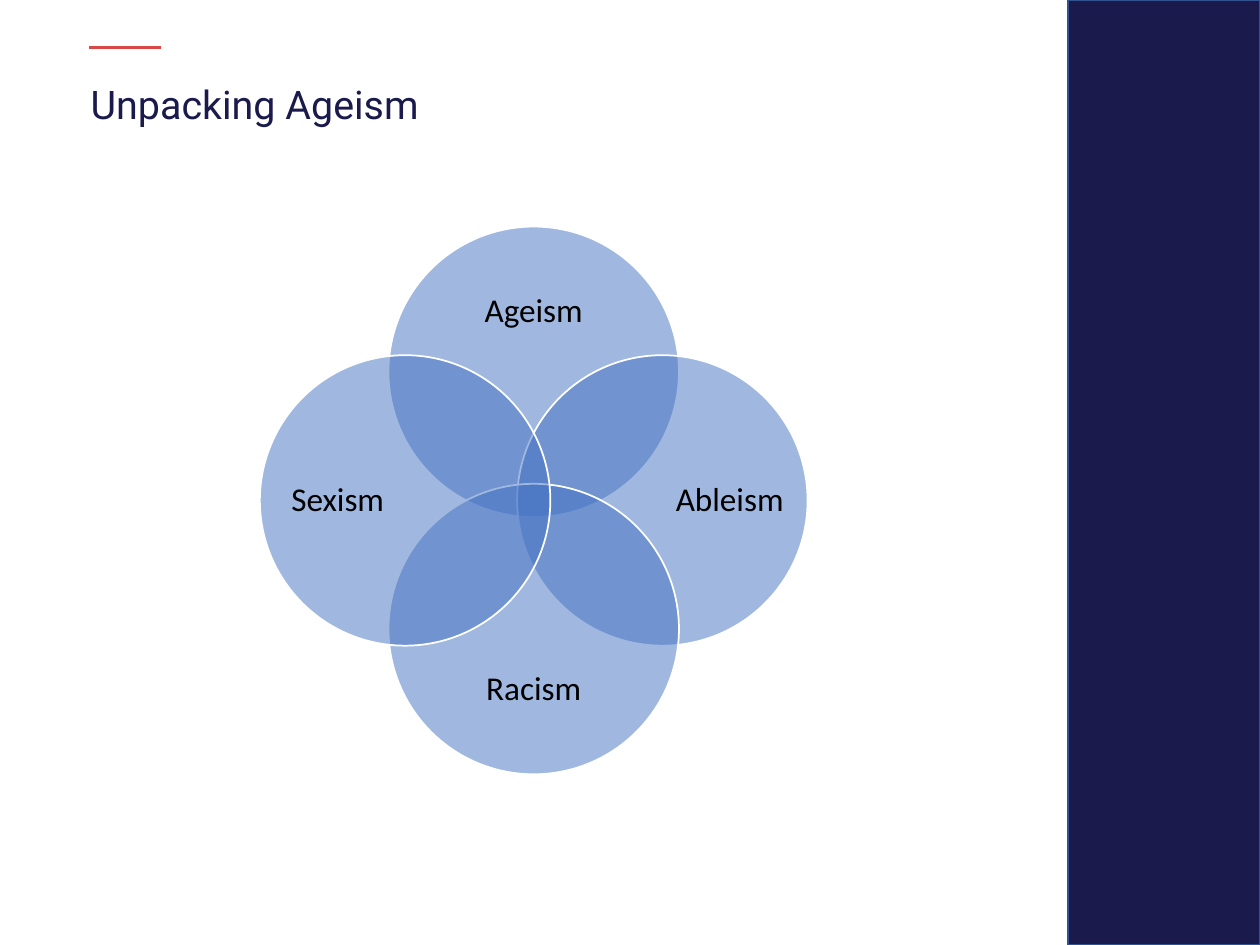
from dataclasses import dataclass

from lxml import etree
from pptx import Presentation
from pptx.dml.color import RGBColor
from pptx.enum import shapes, text
from pptx.oxml import ns
from pptx.util import Pt


@dataclass
class Theme:
    navy: str = "1A1A4C"
    edge: str = "32538F"
    red: str = "D94747"
    blue: str = "4372C3"
    white: str = "FFFFFF"
    black: str = "000000"
    head: float = 22.5
    label: float = 19


theme = Theme()


def write(frame, words, font, size, color, align, anchor, pad=(0, 0)):
    frame.word_wrap = True
    frame.auto_size = text.MSO_AUTO_SIZE.NONE
    frame.vertical_anchor = anchor
    frame.margin_left = frame.margin_right = Pt(pad[0])
    frame.margin_top = frame.margin_bottom = Pt(pad[1])
    para = frame.paragraphs[0]
    para.alignment = align
    para.line_spacing = 0.9
    run = para.add_run()
    run.text = words
    run.font.name = font
    run.font.size = Pt(size)
    run.font.color.rgb = RGBColor.from_string(color)


def draw(kind, left, top, wide, high, fill, line):
    shape = slide.shapes.add_shape(kind, Pt(left), Pt(top), Pt(wide), Pt(high))
    shape.shadow.inherit = False
    shape.fill.solid()
    shape.fill.fore_color.rgb = RGBColor.from_string(fill)
    shape.line.color.rgb = RGBColor.from_string(line)
    shape.line.width = Pt(1)
    return shape


deck = Presentation()
deck.slide_width, deck.slide_height = Pt(720), Pt(540)
slide = deck.slides.add_slide(deck.slide_layouts[5])

draw(shapes.MSO_SHAPE.RECTANGLE, 610.4, 0, 109.6, 540, theme.navy, theme.edge)

rule = slide.shapes.add_connector(
    shapes.MSO_CONNECTOR.STRAIGHT, Pt(51), Pt(27), Pt(92), Pt(27))
rule.line.color.rgb = RGBColor.from_string(theme.red)
rule.line.width = Pt(1.75)
etree.SubElement(rule._element.spPr, ns.qn("a:effectLst"))

title = slide.shapes.title
title.left, title.top = Pt(44.6), Pt(45.4)
title.width, title.height = Pt(521), Pt(44)
write(title.text_frame, "Unpacking Ageism", "Roboto", theme.head, theme.navy,
      text.PP_ALIGN.LEFT, text.MSO_ANCHOR.TOP, (7.2, 3.6))

mid_x, mid_y = 305, 286
size, step = 166, 73.5
petals = [("Ageism", 0, -1), ("Ableism", 1, 0), ("Racism", 0, 1), ("Sexism", -1, 0)]

for name, dx, dy in petals:
    disc = draw(shapes.MSO_SHAPE.OVAL, mid_x + dx * step - size / 2,
                mid_y + dy * step - size / 2, size, size, theme.blue, theme.white)
    tint = disc._element.spPr.find(ns.qn("a:solidFill"))[0]
    etree.SubElement(tint, ns.qn("a:alpha"), val="50000")
    wide, high = (64, 128) if dx else (128, 52.5)
    box = slide.shapes.add_textbox(
        Pt(mid_x + dx * 112 - wide / 2), Pt(mid_y + dy * 108 - high / 2),
        Pt(wide), Pt(high))
    write(box.text_frame, name, "Calibri", theme.label, theme.black,
          text.PP_ALIGN.CENTER, text.MSO_ANCHOR.MIDDLE)

deck.save("out.pptx")
